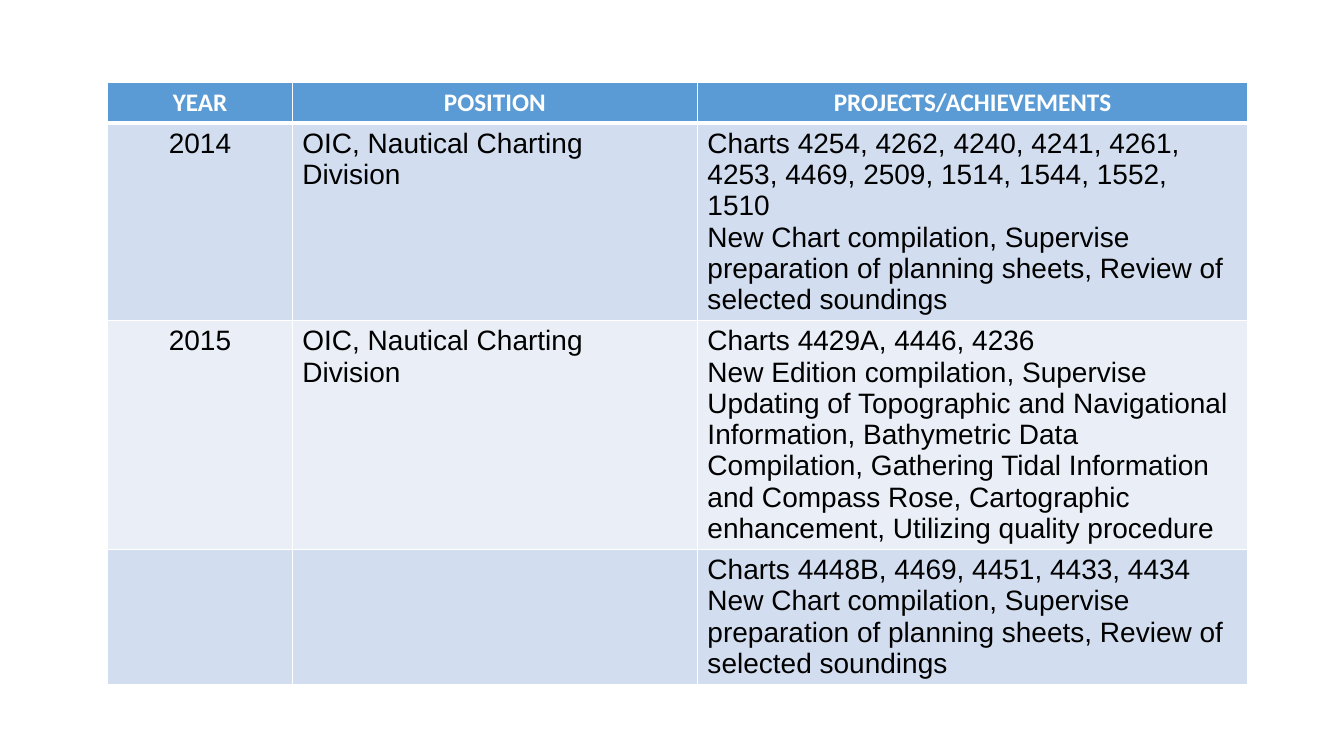
from lxml import etree
from pptx import Presentation
from pptx.dml.color import RGBColor
from pptx.enum.text import PP_ALIGN
from pptx.oxml.ns import qn
from pptx.util import Pt

CENTER = PP_ALIGN.CENTER
LEFT = PP_ALIGN.LEFT

WHITE = "FFFFFF"
BLACK = "000000"
HEADER_BLUE = "5B9BD5"
BANDS = ("D2DEEF", "EAEFF7")

DIVISION = "OIC, Nautical Charting Division"
NEW_CHART = (
    "New Chart compilation, Supervise preparation of planning sheets, "
    "Review of selected soundings"
)
NEW_EDITION = (
    "New Edition compilation, Supervise Updating of Topographic and Navigational "
    "Information, Bathymetric Data Compilation, Gathering Tidal Information and "
    "Compass Rose, Cartographic enhancement, Utilizing quality procedure"
)
CAREER = [
    ("YEAR", "POSITION", "PROJECTS/ACHIEVEMENTS"),
    (
        "2014",
        DIVISION,
        "Charts 4254, 4262, 4240, 4241, 4261, 4253, 4469, 2509, 1514, 1544, 1552, 1510\n"
        + NEW_CHART,
    ),
    ("2015", DIVISION, "Charts 4429A, 4446, 4236\n" + NEW_EDITION),
    ("", "", "Charts 4448B, 4469, 4451, 4433, 4434\n" + NEW_CHART),
]
COLUMN_WIDTHS = (131.8, 289.4, 393.1)
ROW_HEIGHTS = (29.2, 140.6, 163.4, 96.3)


def color(value):
    return RGBColor.from_string(value)


class CareerSlide:
    header_font, header_size = "Calibri", 18
    body_font, body_size = "Arial", 20
    thin, thick = 1, 3

    def __init__(self, presentation):
        self.slide = presentation.slides.add_slide(presentation.slide_layouts[6])

    def table(self, left, top, widths, heights, rows):
        frame = self.slide.shapes.add_table(
            len(rows), len(widths), Pt(left), Pt(top), Pt(sum(widths)), Pt(sum(heights))
        )
        table = frame.table
        for column, width in zip(table.columns, widths):
            column.width = Pt(width)
        for row, height in zip(table.rows, heights):
            row.height = Pt(height)
        for r, entries in enumerate(rows):
            for c, entry in enumerate(entries):
                self.cell(table.cell(r, c), entry, r, c)

    def cell(self, cell, entry, r, c):
        header = r == 0
        cell.fill.solid()
        cell.fill.fore_color.rgb = color(HEADER_BLUE if header else BANDS[(r - 1) % 2])
        cell.text_frame.text = entry
        for paragraph in cell.text_frame.paragraphs:
            paragraph.alignment = CENTER if header or c == 0 else LEFT
            for run in paragraph.runs:
                run.font.name = self.header_font if header else self.body_font
                run.font.size = Pt(self.header_size if header else self.body_size)
                run.font.bold = header
                run.font.color.rgb = color(WHITE if header else BLACK)
        self.borders(
            cell,
            top=self.thick if r == 1 else self.thin,
            bottom=self.thick if header else self.thin,
        )

    def borders(self, cell, top, bottom):
        properties = cell._tc.get_or_add_tcPr()
        sides = {"lnL": self.thin, "lnR": self.thin, "lnT": top, "lnB": bottom}
        for position, (side, width) in enumerate(sides.items()):
            line = etree.Element(qn(f"a:{side}"), w=str(Pt(width)))
            fill = etree.SubElement(line, qn("a:solidFill"))
            etree.SubElement(fill, qn("a:srgbClr"), val=WHITE)
            properties.insert(position, line)


def main():
    presentation = Presentation()
    presentation.slide_width = Pt(960)
    presentation.slide_height = Pt(540)
    career = CareerSlide(presentation)
    career.table(77, 58.7, COLUMN_WIDTHS, ROW_HEIGHTS, CAREER)
    presentation.save("out.pptx")


if __name__ == "__main__":
    main()
